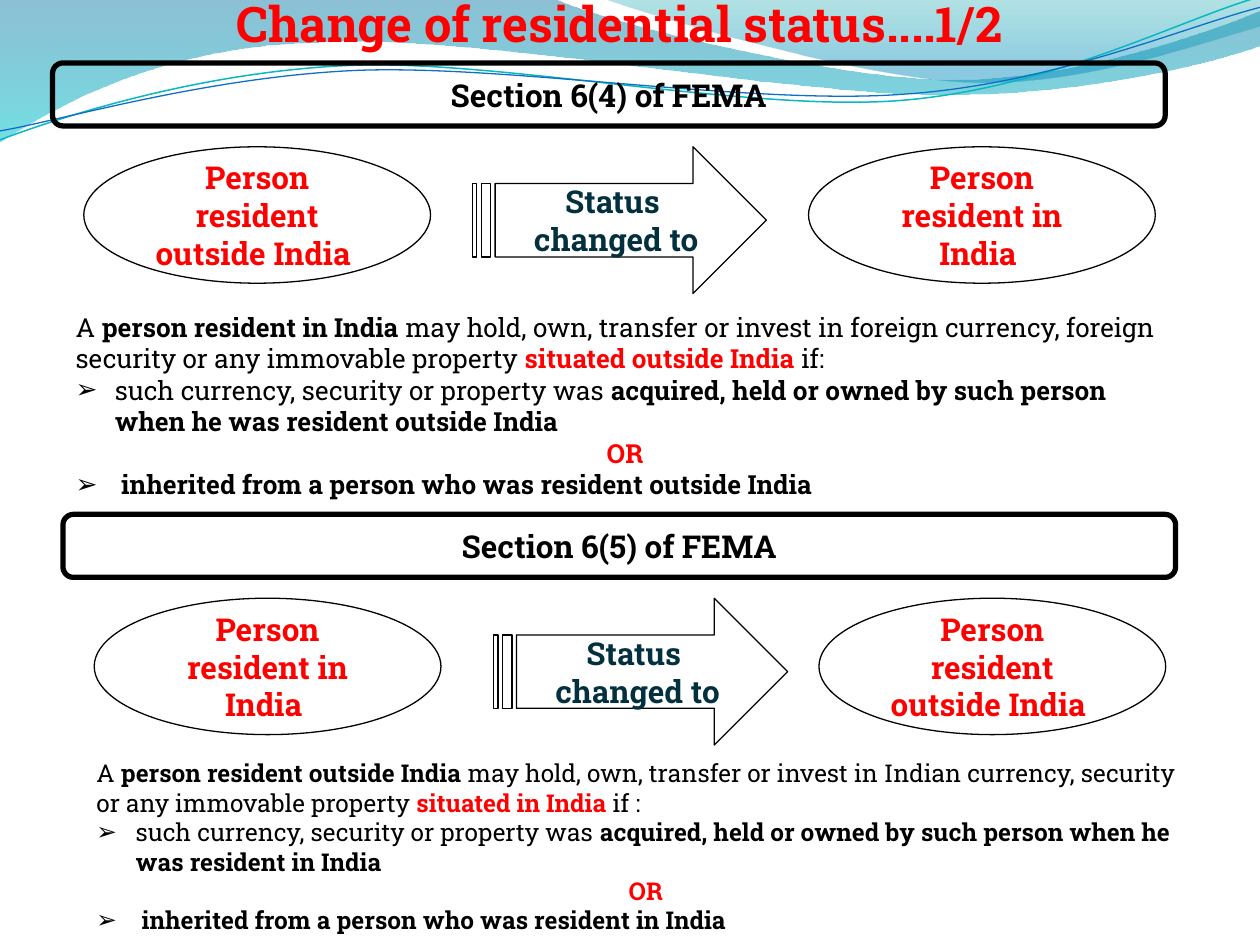
from dataclasses import dataclass

from lxml import etree
from pptx import Presentation
from pptx import util as u
from pptx.dml.color import RGBColor
from pptx.enum import shapes, text
from pptx.oxml import ns


@dataclass(frozen=True)
class Theme:
    """Colours, type sizes and line widths of the slide."""
    font: str = "Roboto Slab"
    black: str = "000000"
    red: str = "FF0000"
    navy: str = "02303E"
    title: int = 28
    label: int = 18
    thick: float = 3
    thin: float = 0.75


THEME = Theme()
STYLES = {
    "plain": (THEME.black, False),
    "strong": (THEME.black, True),
    "alert": (THEME.red, True),
    "status": (THEME.navy, True),
}
LEFT, CENTER = text.PP_ALIGN.LEFT, text.PP_ALIGN.CENTER

WAVES = [
    ((0, 0), [(11.18, -0.02), (12.09, 0.43, 16.87, 1.6, 19.25, 1.6),
              (21.67, 1.6, 24.33, 0.66, 25.4, 0.23), (25.43, 0.91),
              (24.97, 1.12, 22.1, 1.93, 18.95, 1.91),
              (15.8, 1.91, 9.7, 0.71, 6.53, 0.86),
              (3.28, 0.91, 1.17, 2.11, -0.03, 2.87)],
     [(0, "0074A1", 45), (1, "00C6CF", 55)]),
    ((12.17, -0.02), [(12.93, 0.28, 17.32, 1.57, 19.53, 1.65),
                      (21.74, 1.75, 24.41, 0.81, 25.4, 0.53), (25.4, 0)],
     [(0, "00A1A9", 30), (0.8, "008BBF", 45)]),
]
STRANDS = [
    ((0, 2.82), [(1.22, 2.36, 4.01, 1.45, 7.04, 1.32),
                 (10.03, 1.19, 15.06, 2.26, 18.11, 2.03),
                 (21.16, 1.8, 23.83, 0.38, 25.35, -0.05)], "0AB8BF", 0.85),
    ((0, 2.64), [(1.19, 2.44, 4.17, 1.55, 7.19, 1.42),
                 (10.24, 1.3, 15.16, 2.13, 18.21, 1.9),
                 (21.23, 1.7, 23.9, 0.53, 25.4, 0.15)], "0F6FC6", 0.75),
]
SECTIONS = [
    {"heading": "Section 6(4) of FEMA", "banner": (1.06, 1.27), "row": 2.96,
     "columns": (1.69, 9.52, 16.3), "before": "outside India", "after": "in India",
     "assets": "foreign currency, foreign security", "place": "outside India",
     "ending": "if:", "body": (1.27, 6.14, 22.66, 4.11), "size": 15},
    {"heading": "Section 6(5) of FEMA", "banner": (1.27, 10.37), "row": 12.06,
     "columns": (1.9, 9.95, 16.51), "before": "in India", "after": "outside India",
     "assets": "Indian currency, security", "place": "in India",
     "ending": "if :", "body": (1.69, 15.16, 22.66, 3.84), "size": 14},
]


def assign(target, values):
    """Set each named attribute on the target."""
    for name, value in values.items():
        setattr(target, name, value)


def place(shape, left, top, width, height):
    """Move and size a shape, in centimetres."""
    assign(shape, {"left": u.Cm(left), "top": u.Cm(top),
                   "width": u.Cm(width), "height": u.Cm(height)})


def write(para, spans, size, align=CENTER):
    """Fill a paragraph with (wording, style) spans."""
    assign(para, {"alignment": align, "space_before": u.Pt(0)})
    for wording, style in spans:
        color, bold = STYLES[style]
        span = para.add_run()
        span.text = wording
        assign(span.font, {"name": THEME.font, "size": u.Pt(size), "bold": bold})
        span.font.color.rgb = RGBColor.from_string(color)


def set_bullet(para, char=None, indent=0.0):
    """Give a paragraph its hanging indent and bullet, or no bullet."""
    props = para._p.get_or_add_pPr()
    props.set("marL", str(u.Cm(indent)))
    props.set("indent", str(-u.Cm(indent)))
    bullet = etree.SubElement(props, ns.qn("a:buChar" if char else "a:buNone"))
    if char:
        bullet.set("char", char)


def bend(outline, segments):
    """Turn each run of three straight steps into one cubic curve."""
    steps = iter(list(outline.element.iter(ns.qn("a:lnTo"))))
    for segment in segments:
        step = next(steps)
        if len(segment) == 6:
            curve = etree.Element(ns.qn("a:cubicBezTo"))
            step.addprevious(curve)
            for knot in (step, next(steps), next(steps)):
                curve.append(knot[0])
                knot.getparent().remove(knot)


def add_outline(page, start, segments, close):
    """Draw a freeform of straight and cubic segments."""
    builder = page.shapes.build_freeform(*(u.Cm(value) for value in start))
    builder.add_line_segments(
        [(u.Cm(x), u.Cm(y)) for segment in segments
         for x, y in zip(segment[::2], segment[1::2])], close=close)
    outline = builder.convert_to_shape()
    outline.shadow.inherit = False
    bend(outline, segments)
    return outline


def add_wave(page, start, segments, stops):
    """Draw a translucent wave with a downward gradient."""
    wave = add_outline(page, start, segments, True)
    wave.line.fill.background()
    wave.fill.gradient()
    wave.fill.gradient_angle = 270
    for stop, (position, color, _) in zip(wave.fill.gradient_stops, stops):
        stop.position = position
        stop.color.rgb = RGBColor.from_string(color)
    for node, (_, _, opacity) in zip(wave.element.iter(ns.qn("a:srgbClr")), stops):
        etree.SubElement(node, ns.qn("a:alpha")).set("val", str(opacity * 1000))
    return wave


def set_line(shape, color, width):
    """Leave a shape unfilled with a plain outline."""
    shape.fill.background()
    shape.line.color.rgb = RGBColor.from_string(color)
    shape.line.width = u.Pt(width)


def add_strand(page, start, segments, color, width):
    """Draw a thin curved line."""
    strand = add_outline(page, start, segments, False)
    set_line(strand, color, width)
    return strand


def add_backdrop(page):
    """Draw the waves and strands behind the text."""
    art = [add_wave(page, *wave) for wave in WAVES]
    art += [add_strand(page, *strand) for strand in STRANDS]
    for index, shape in enumerate(art, start=2):
        shape.element.getparent().insert(index, shape.element)


def add_label(page, kind, frame, lines, style, width=THEME.thin):
    """Add an outlined shape with centred lines of text."""
    box = page.shapes.add_shape(kind, *(u.Cm(value) for value in frame))
    box.shadow.inherit = False
    set_line(box, THEME.black, width)
    assign(box.text_frame, {"word_wrap": True, "vertical_anchor": text.MSO_ANCHOR.MIDDLE})
    for index, line in enumerate(lines):
        para = box.text_frame.add_paragraph() if index else box.text_frame.paragraphs[0]
        write(para, [(line, style)], THEME.label)


def fill_title(title):
    """Place and write the slide title."""
    place(title, 1.06, 0.21, 22.86, 0.85)
    assign(title.text_frame, {
        "word_wrap": True, "auto_size": text.MSO_AUTO_SIZE.NONE,
        "vertical_anchor": text.MSO_ANCHOR.BOTTOM, "margin_left": 0,
        "margin_top": u.Cm(0.13), "margin_right": 0, "margin_bottom": 0})
    write(title.text_frame.paragraphs[0],
          [("Change of residential status....1/2", "alert")], THEME.title)


def fill_rule(body, section):
    """Write the legal rule and its alternatives."""
    place(body, *section["body"])
    body.element.getparent().append(body.element)
    frame = body.text_frame
    assign(frame, {"word_wrap": True, "auto_size": text.MSO_AUTO_SIZE.SHAPE_TO_FIT_TEXT})
    before, after = section["before"], section["after"]
    rows = [
        ([("A ", "plain"), (f"person resident {after} ", "strong"),
          (f"may hold, own, transfer or invest in {section['assets']} "
           "or any immovable property ", "plain"),
          (f"situated {section['place']} ", "alert"), (section["ending"], "plain")],
         LEFT, None, 0),
        ([("such currency, security or property was ", "plain"),
          ("acquired, held or owned by such person when he was "
           f"resident {before}", "strong")], LEFT, "➢", 0.79),
        ([("OR", "alert")], CENTER, None, 0.79),
        ([(f" inherited from a person who was resident {before}", "strong")],
         LEFT, "➢", 0.79),
    ]
    for index, (spans, align, char, indent) in enumerate(rows):
        para = frame.add_paragraph() if index else frame.paragraphs[0]
        write(para, spans, section["size"], align)
        set_bullet(para, char, indent)


def add_section(page, body, section):
    """Build one section: banner, change of status and rule."""
    kinds = shapes.MSO_SHAPE
    first, middle, last = section["columns"]
    row = section["row"]
    add_label(page, kinds.ROUNDED_RECTANGLE, (*section["banner"], 22.43, 1.27),
              [section["heading"]], "strong", THEME.thick)
    add_label(page, kinds.STRIPED_RIGHT_ARROW, (middle, row, 5.93, 2.96),
              ["Status", " changed to"], "status")
    for left, status in ((first, section["before"]), (last, section["after"])):
        add_label(page, kinds.OVAL, (left, row, 6.99, 2.75),
                  [f"Person resident {status} "], "alert")
    fill_rule(body, section)


def main():
    """Build and save the slide."""
    deck = Presentation()
    assign(deck, {"slide_width": u.Cm(25.4), "slide_height": u.Cm(19.05)})
    page = deck.slides.add_slide(deck.slide_layouts[3])
    title, *bodies = page.placeholders
    add_backdrop(page)
    fill_title(title)
    for body, section in zip(bodies, SECTIONS):
        add_section(page, body, section)
    deck.save("out.pptx")


if __name__ == "__main__":
    main()
